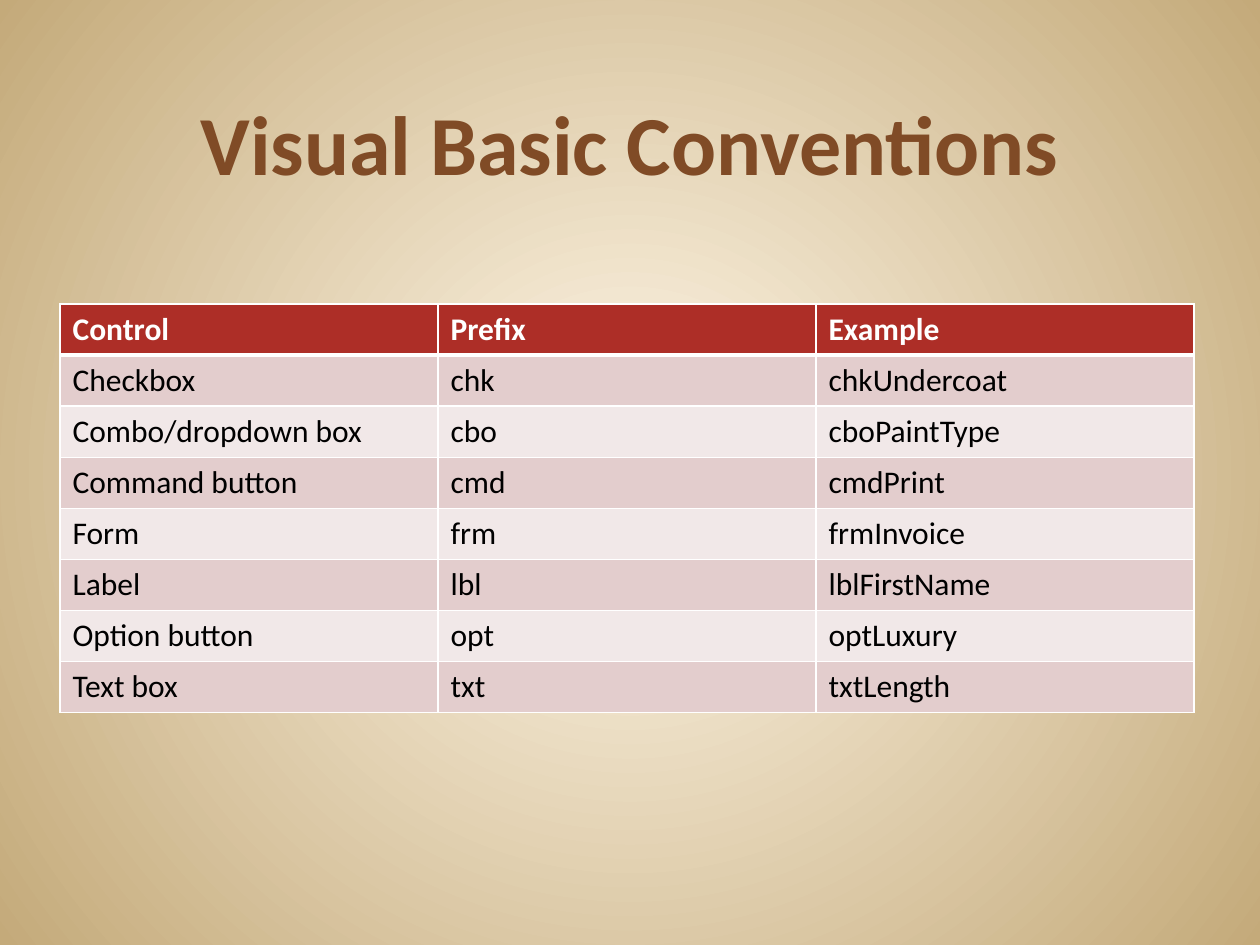
from lxml.etree import SubElement
from pptx import Presentation
from pptx.dml.color import RGBColor
from pptx.enum.text import MSO_ANCHOR, PP_ALIGN
from pptx.oxml import parse_xml
from pptx.oxml.ns import nsdecls, qn
from pptx.util import Pt

COLORS = {
    "glow": "FFF7E8",
    "sand": "C4AA7A",
    "title": "804B26",
    "header": "AD2E27",
    "odd": "E3CDCD",
    "even": "F1E8E8",
    "white": "FFFFFF",
    "black": "000000",
}
ROWS = [
    ("Control", "Prefix", "Example"),
    ("Checkbox", "chk", "chkUndercoat"),
    ("Combo/dropdown box", "cbo", "cboPaintType"),
    ("Command button", "cmd", "cmdPrint"),
    ("Form", "frm", "frmInvoice"),
    ("Label", "lbl", "lblFirstName"),
    ("Option button", "opt", "optLuxury"),
    ("Text box", "txt", "txtLength"),
]
COLUMN_WIDTH, ROW_HEIGHT = 378, 51


def px(length):
    return round(length * 914400 / 126)


def format_text(paragraph, color, size, bold):
    font = paragraph.runs[0].font
    for name, value in {"name": "Calibri", "size": Pt(size), "bold": bold}.items():
        setattr(font, name, value)
    font.color.rgb = RGBColor.from_string(COLORS[color])


presentation = Presentation()
presentation.slide_width, presentation.slide_height = px(1260), px(945)
slide = presentation.slides.add_slide(presentation.slide_layouts[5])

slide.background.fill.solid()
background = slide.element.find(".//" + qn("p:bgPr"))
background.replace(background[0], parse_xml(
    f'<a:gradFill {nsdecls("a")} rotWithShape="1"><a:gsLst>'
    f'<a:gs pos="0"><a:srgbClr val="{COLORS["glow"]}"/></a:gs>'
    f'<a:gs pos="100000"><a:srgbClr val="{COLORS["sand"]}"/></a:gs></a:gsLst>'
    '<a:path path="circle"><a:fillToRect l="50000" t="50000" r="50000" b="50000"/></a:path>'
    '</a:gradFill>'))

title = slide.shapes.title
title_box = {"left": 63, "top": 42, "width": 1134, "height": 157}
for name, value in title_box.items():
    setattr(title, name, px(value))
title.text_frame.text = "Visual Basic Conventions"
title.text_frame.vertical_anchor = MSO_ANCHOR.BOTTOM
paragraph = title.text_frame.paragraphs[0]
paragraph.alignment = PP_ALIGN.CENTER
format_text(paragraph, "title", 48, True)

table = slide.shapes.add_table(
    len(ROWS), 3, px(60), px(304), px(3 * COLUMN_WIDTH), px(len(ROWS) * ROW_HEIGHT)
).table
for column in table.columns:
    column.width = px(COLUMN_WIDTH)

for row_index, texts in enumerate(ROWS):
    table.rows[row_index].height = px(ROW_HEIGHT)
    is_header = row_index == 0
    fill = "header" if is_header else ("even", "odd")[row_index % 2]
    for column_index, text in enumerate(texts):
        cell = table.cell(row_index, column_index)
        cell.text = text
        format_text(cell.text_frame.paragraphs[0], "white" if is_header else "black", 18, is_header)
        properties = cell._tc.get_or_add_tcPr()
        for side in ("lnL", "lnR", "lnT", "lnB"):
            thick = (row_index, side) in ((0, "lnB"), (1, "lnT"))
            border = SubElement(properties, qn(f"a:{side}"), w=str(Pt(3 if thick else 1)))
            SubElement(SubElement(border, qn("a:solidFill")), qn("a:srgbClr"), val=COLORS["white"])
        cell.fill.solid()
        cell.fill.fore_color.rgb = RGBColor.from_string(COLORS[fill])

presentation.save("out.pptx")
